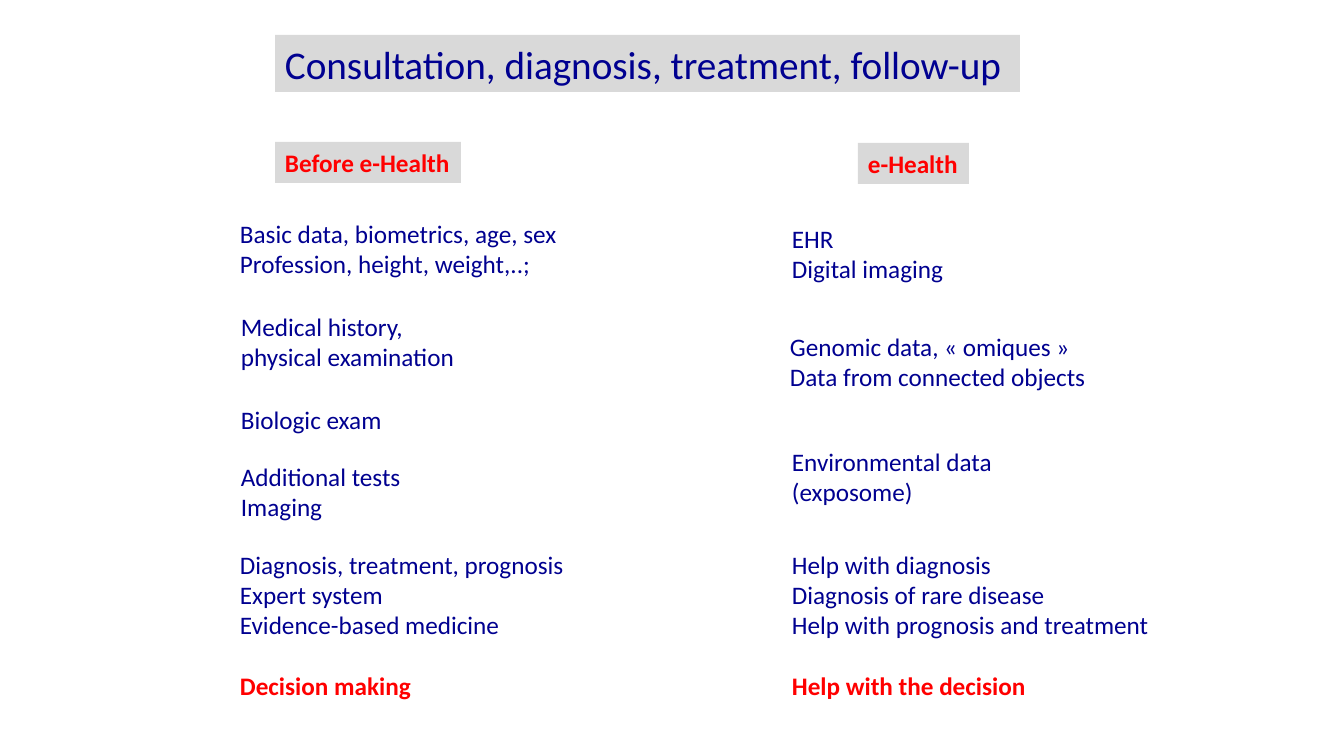
"""Build a slide comparing care steps before e-Health and with e-Health."""
from dataclasses import dataclass

from pptx import Presentation
from pptx.dml.color import RGBColor
from pptx.enum.shapes import MSO_SHAPE
from pptx.enum.text import MSO_ANCHOR, PP_ALIGN
from pptx.util import Emu, Pt

RECTANGLE = MSO_SHAPE.RECTANGLE
TOP = MSO_ANCHOR.TOP
LEFT = PP_ALIGN.LEFT


@dataclass(frozen=True)
class Theme:
    font: str = "Calibri"
    title_size: int = 28
    body_size: int = 18
    conclusion_gap: int = 22
    text: RGBColor = RGBColor(0x00, 0x00, 0x90)
    accent: RGBColor = RGBColor(0xFF, 0x00, 0x00)
    band: RGBColor = RGBColor(0xD9, 0xD9, 0xD9)


THEME = Theme()
PX = 914400 / 100.8
SLIDE_SIZE = (1344, 756)

TITLE = ("Consultation, diagnosis, treatment, follow-up", (275, 35, 745, 57))
HEADINGS = [
    ("Before e-Health", (275, 142, 186, 41)),
    ("e-Health", (858, 143, 111, 41)),
]
NOTES = [
    (["Basic data, biometrics, age, sex", "Profession, height, weight,..;"], (230, 213, 341, 71)),
    (["Medical history,", "physical examination"], (231, 306, 236, 71)),
    (["Biologic exam"], (231, 399, 162, 41)),
    (["Additional tests", "Imaging"], (231, 456, 181, 71)),
    (["EHR", "Digital imaging"], (782, 218, 173, 102)),
    (["Genomic data, «\u00a0omiques\u00a0»", "Data from connected objects"], (780, 326, 320, 102)),
    (["Environmental data", "(exposome)"], (782, 441, 223, 71)),
]
OUTCOMES = [
    (["Diagnosis, treatment, prognosis", "Expert system", "Evidence-based medicine"],
     "Decision making", (230, 544, 348, 193)),
    (["Help with diagnosis", "Diagnosis of rare disease", "Help with prognosis and treatment"],
     "Help with the decision", (782, 544, 381, 193)),
]


def px(length):
    return Emu(round(length * PX))


def style_paragraph(paragraph, text, size, color, bold=False):
    paragraph.text = text
    paragraph.alignment = LEFT
    paragraph.font.name = THEME.font
    paragraph.font.size = Pt(size)
    paragraph.font.color.rgb = color
    paragraph.font.bold = bold


def prepare_frame(shape):
    frame = shape.text_frame
    frame.word_wrap = True
    frame.vertical_anchor = TOP
    frame.margin_right = 0
    return frame


def add_band(slide, text, box, size, color, bold=False):
    band = slide.shapes.add_shape(RECTANGLE, *map(px, box))
    band.shadow.inherit = False
    band.fill.solid()
    band.fill.fore_color.rgb = THEME.band
    band.line.fill.background()
    style_paragraph(prepare_frame(band).paragraphs[0], text, size, color, bold)


def add_note(slide, lines, box):
    frame = prepare_frame(slide.shapes.add_textbox(*map(px, box)))
    for index, line in enumerate(lines):
        paragraph = frame.add_paragraph() if index else frame.paragraphs[0]
        style_paragraph(paragraph, line, THEME.body_size, THEME.text)
    return frame


def main():
    presentation = Presentation()
    presentation.slide_width, presentation.slide_height = map(px, SLIDE_SIZE)
    slide = presentation.slides.add_slide(presentation.slide_layouts[6])

    add_band(slide, *TITLE, THEME.title_size, THEME.text)
    for text, box in HEADINGS:
        add_band(slide, text, box, THEME.body_size, THEME.accent, bold=True)
    for lines, box in NOTES:
        add_note(slide, lines, box)
    for lines, conclusion, box in OUTCOMES:
        paragraph = add_note(slide, lines, box).add_paragraph()
        style_paragraph(paragraph, conclusion, THEME.body_size, THEME.accent, bold=True)
        paragraph.space_before = Pt(THEME.conclusion_gap)

    presentation.save("out.pptx")


if __name__ == "__main__":
    main()
